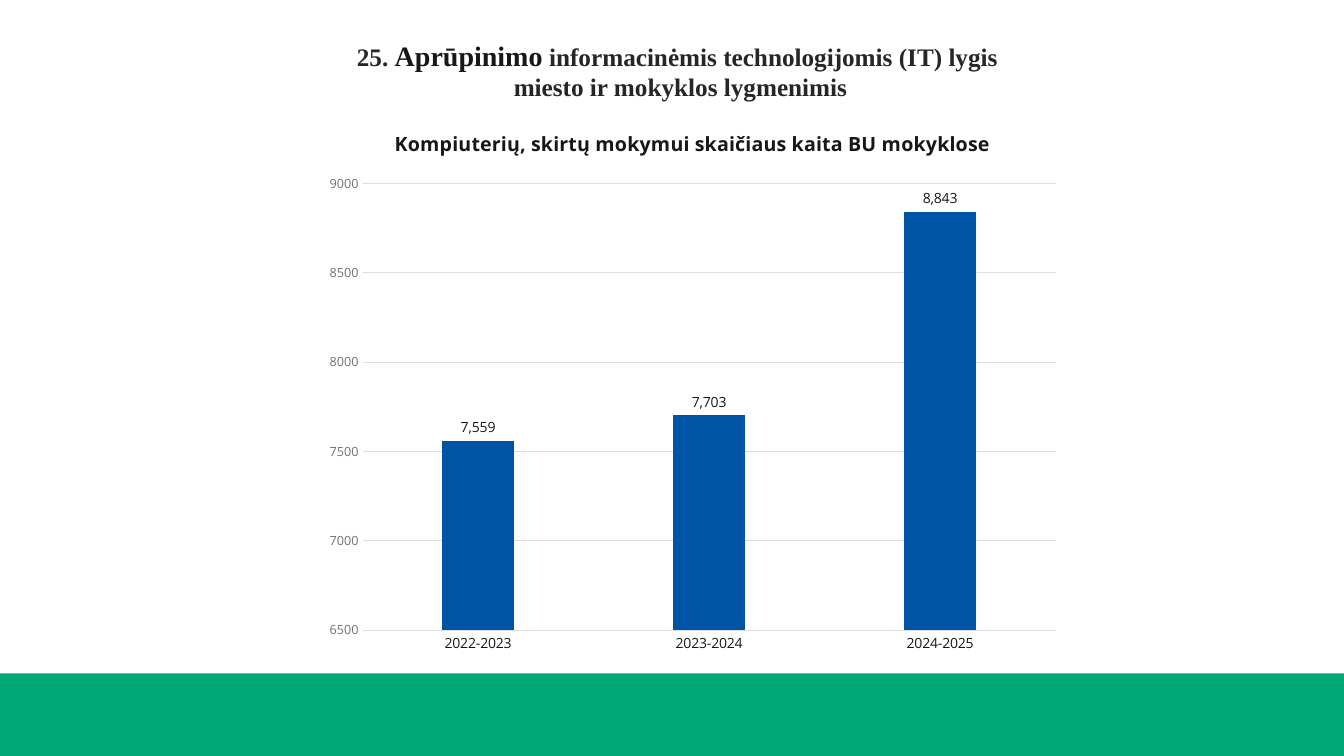
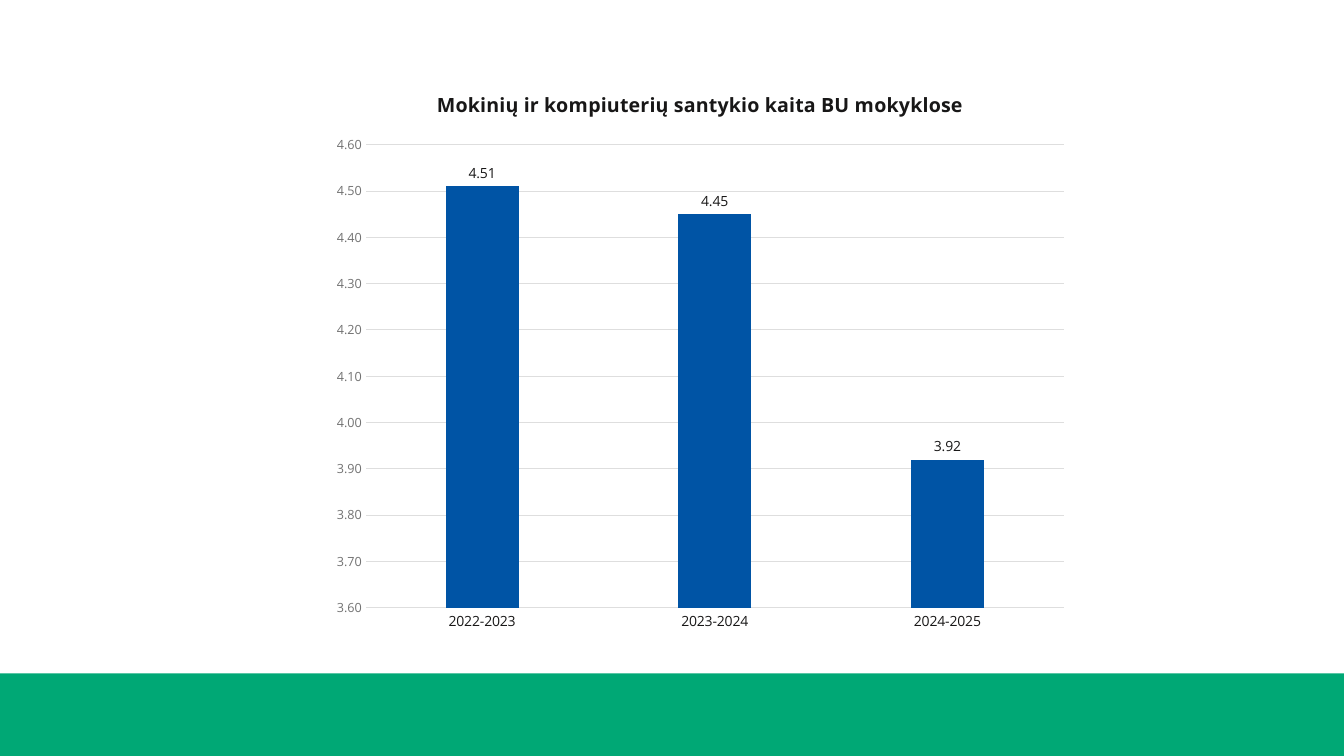
from pptx import Presentation
from pptx.chart.data import CategoryChartData
from pptx.dml.color import RGBColor
from pptx.enum import chart as chart_enum, shapes, text
from pptx.util import Inches, Pt

GREEN, BLUE, GRID = "00A875", "0054A5", "DEDEDE"
INK, TITLE_INK, AXIS_INK = "181717", "262626", "727272"
YEARS = ["2022-2023", "2023-2024", "2024-2025"]


def color(value):
    return RGBColor.from_string(value)


def set_font(font, size, ink=INK, name="Open Sans", bold=False):
    font.size, font.name, font.bold = Pt(size), name, bold
    font.color.rgb = color(ink)


presentation = Presentation()
presentation.slide_width = Inches(13.33)
presentation.slide_height = Inches(7.5)

# Heading: paragraphs of (text, size, colour) runs
heading = [
    [("25. ", 18, TITLE_INK), ("Aprūpinimo", 20, INK),
     (" informacinėmis technologijomis (IT) lygis ", 18, TITLE_INK)],
    [("miesto ir mokyklos lygmenimis", 18, TITLE_INK)],
]

# One chart per slide
slides = [
    dict(heading=heading, box=(3.12, 1.07, 7.5, 5.52),
         title="Kompiuterių, skirtų mokymui skaičiaus kaita BU mokyklose",
         values=[7559, 7703, 8843], scale=(6500, 9000, 500),
         axis_format="0", label_format="#,##0"),
    dict(heading=[], box=(3.19, 0.68, 7.51, 5.69),
         title="Mokinių ir kompiuterių santykio kaita BU mokyklose",
         values=[4.51, 4.45, 3.92], scale=(3.6, 4.6, 0.1),
         axis_format="0.00", label_format="0.00"),
]

for content in slides:
    slide = presentation.slides.add_slide(presentation.slide_layouts[6])

    # Bottom band
    band = slide.shapes.add_shape(shapes.MSO_SHAPE.RECTANGLE, 0, Inches(6.68),
                                  presentation.slide_width, Inches(0.82))
    band.shadow.inherit = False
    band.fill.solid()
    band.fill.fore_color.rgb = color(GREEN)
    band.line.fill.background()

    # Heading
    if content["heading"]:
        box = slide.shapes.add_textbox(Inches(1.95), Inches(0.33), Inches(9.6), Inches(0.74))
        frame = box.text_frame
        frame.word_wrap = True
        frame.auto_size = text.MSO_AUTO_SIZE.SHAPE_TO_FIT_TEXT
        for index, runs in enumerate(content["heading"]):
            paragraph = frame.add_paragraph() if index else frame.paragraphs[0]
            paragraph.alignment = text.PP_ALIGN.CENTER
            for words, size, ink in runs:
                run = paragraph.add_run()
                run.text = words
                set_font(run.font, size, ink, "Times New Roman", bold=True)

    # Chart and its title
    data = CategoryChartData()
    data.categories = YEARS
    data.add_series(content["title"], content["values"])
    chart = slide.shapes.add_chart(chart_enum.XL_CHART_TYPE.COLUMN_CLUSTERED,
                                   *map(Inches, content["box"]), data).chart
    set_font(chart.font, 10, TITLE_INK)
    chart.has_legend = False
    chart.has_title = True
    chart.chart_title.include_in_layout = False
    title_run = chart.chart_title.text_frame.paragraphs[0].add_run()
    title_run.text = content["title"]
    set_font(title_run.font, 14, bold=True)

    # Axes
    years, values = chart.category_axis, chart.value_axis
    for axis, size, ink in [(years, 10, INK), (values, 9, AXIS_INK)]:
        axis.major_tick_mark = axis.minor_tick_mark = chart_enum.XL_TICK_MARK.NONE
        set_font(axis.tick_labels.font, size, ink)
    values.has_major_gridlines = True
    for line in (years.format.line, values.major_gridlines.format.line):
        line.color.rgb = color(GRID)
        line.width = Pt(0.75)
    values.format.line.fill.background()
    values.minimum_scale, values.maximum_scale, values.major_unit = content["scale"]
    values.tick_labels.number_format = content["axis_format"]
    values.tick_labels.number_format_is_linked = False

    # Columns and value labels
    plot = chart.plots[0]
    plot.gap_width, plot.overlap = 219, -27
    plot.vary_by_categories = False
    series = plot.series[0]
    series.format.fill.solid()
    series.format.fill.fore_color.rgb = color(BLUE)
    labels = series.data_labels
    labels.show_value = True
    labels.position = chart_enum.XL_LABEL_POSITION.OUTSIDE_END
    labels.number_format = content["label_format"]
    labels.number_format_is_linked = False
    set_font(labels.font, 10)

presentation.save("out.pptx")
